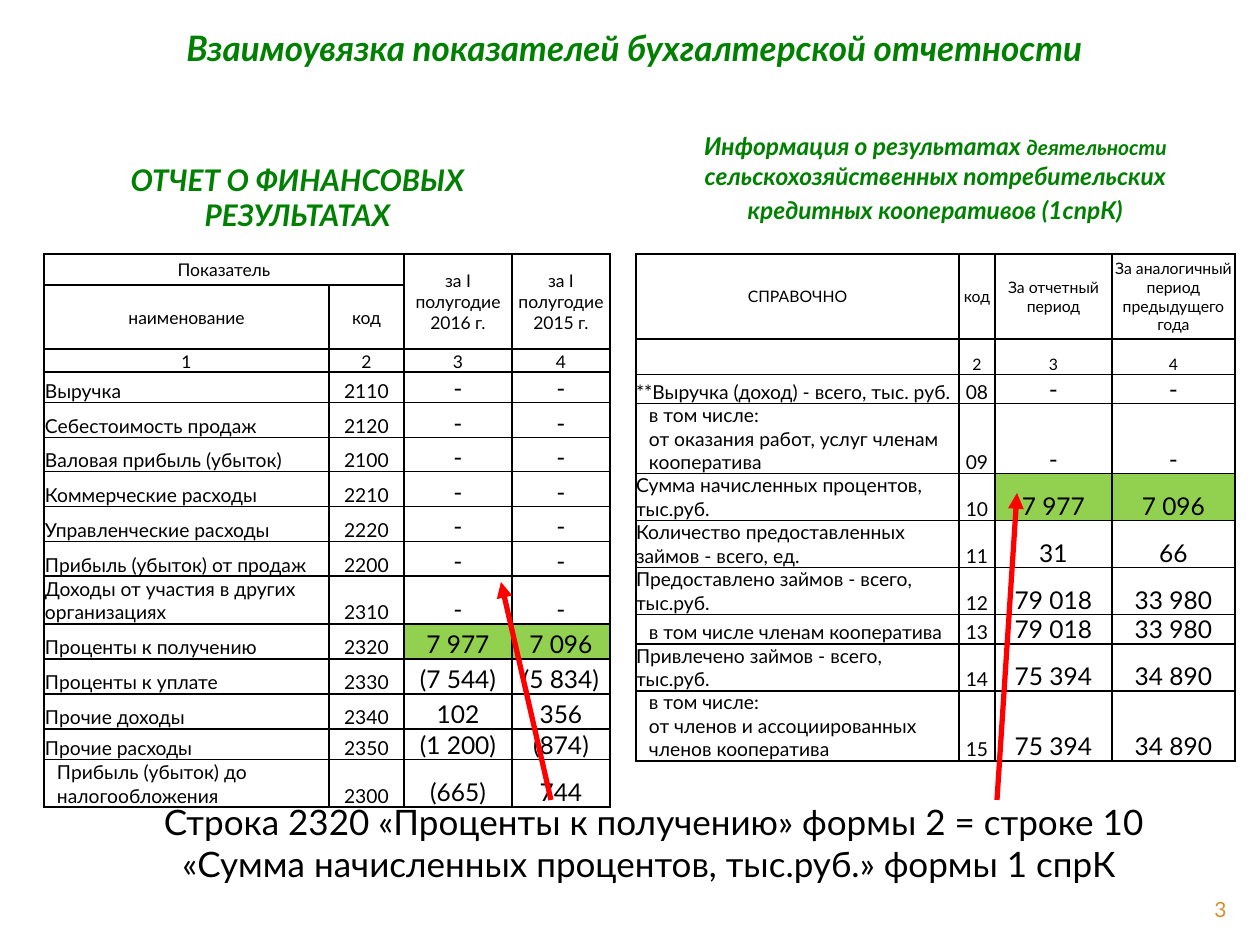
from lxml import etree
from pptx import Presentation
from pptx import util as u
from pptx.dml.color import RGBColor
from pptx.enum import shapes, text as t
from pptx.oxml import ns

PX_PER_INCH = 126
FONT = "Lato"
GREEN = RGBColor(0x00, 0x80, 0x00)
LIME = RGBColor(0x92, 0xD0, 0x50)
RED = RGBColor(0xFF, 0x00, 0x00)
BLACK = RGBColor(0x00, 0x00, 0x00)
WHITE = RGBColor(0xFF, 0xFF, 0xFF)
OCHRE = RGBColor(0xD4, 0x8F, 0x29)
CENTER, LEFT, RIGHT = t.PP_ALIGN.CENTER, t.PP_ALIGN.LEFT, t.PP_ALIGN.RIGHT
TOP, MIDDLE, BOTTOM = t.MSO_ANCHOR.TOP, t.MSO_ANCHOR.MIDDLE, t.MSO_ANCHOR.BOTTOM

INCOME_HEADER = [
    ["Показатель", "", "за I полугодие 2016 г.", "за I полугодие 2015 г."],
    ["наименование", "код", "", ""],
    ["1", "2", "3", "4"],
]
INCOME_ROWS = [
    ["Выручка", "2110", "-", "-"],
    ["Себестоимость продаж", "2120", "-", "-"],
    ["Валовая прибыль (убыток)", "2100", "-", "-"],
    ["Коммерческие расходы", "2210", "-", "-"],
    ["Управленческие расходы", "2220", "-", "-"],
    ["Прибыль (убыток) от продаж", "2200", "-", "-"],
    ["Доходы от участия в других организациях", "2310", "-", "-"],
    ["Проценты к получению", "2320", "7 977", "7 096"],
    ["Проценты к уплате", "2330", "(7 544)", "(5 834)"],
    ["Прочие доходы", "2340", "102", "356"],
    ["Прочие расходы", "2350", "(1 200)", "(874)"],
    ["Прибыль (убыток) до налогообложения", "2300", "(665)", "744"],
]
INCOME_HEIGHTS = [31, 63, 23, 30, 35, 34, 35, 35, 35, 47, 35, 35, 35, 30, 48]

COOP_HEADER = [
    ["СПРАВОЧНО", "код", "За отчетный период", "За аналогичный период предыдущего года"],
    ["", "2", "3", "4"],
]
COOP_ROWS = [
    ["**Выручка (доход) - всего, тыс. руб.", "08", "-", "-"],
    ["в том числе:\nот оказания работ, услуг членам кооператива", "09", "-", "-"],
    ["Сумма начисленных процентов, тыс.руб.", "10", "7 977", "7 096"],
    ["Количество предоставленных займов - всего, ед.", "11", "31", "66"],
    ["Предоставлено займов - всего, тыс.руб.", "12", "79 018", "33 980"],
    ["в том числе членам кооператива", "13", "79 018", "33 980"],
    ["Привлечено займов - всего, тыс.руб.", "14", "75 394", "34 890"],
    ["в том числе:\nот членов и ассоциированных членов кооператива", "15", "75 394", "34 890"],
]
COOP_HEIGHTS = [85, 21, 29, 70, 46, 47, 47, 29, 47, 70]

INDENTED_CODES = {"2300", "09", "13", "15"}
LINKED_CODES = {"2320", "10"}


def px(*lengths):
    values = [round(length * u.Inches(1) / PX_PER_INCH) for length in lengths]
    return values if len(values) > 1 else values[0]


def write(para, words, size, color=BLACK, bold=False, italic=False, align=CENTER, before=0):
    para.alignment = align
    para.space_before = u.Pt(before)
    for index, line in enumerate(words.split("\n")):
        if index:
            para.add_line_break()
        span = para.add_run()
        span.text = line
        font = span.font
        font.name, font.size = FONT, u.Pt(size)
        font.bold, font.italic = bold, italic
        font.color.rgb = color


def place(box, left, top, width, height, anchor=TOP):
    box.left, box.top, box.width, box.height = px(left, top, width, height)
    frame = box.text_frame
    frame.word_wrap = True
    frame.auto_size = t.MSO_AUTO_SIZE.NONE
    frame.vertical_anchor = anchor
    return frame


def write_heading(para, words, size):
    write(para, words, size, GREEN, bold=True, italic=True, before=round(size * 0.2, 1))


def set_borders(cell, color):
    props = cell._tc.get_or_add_tcPr()
    for index, side in enumerate(("a:lnL", "a:lnR", "a:lnT", "a:lnB")):
        line = etree.Element(ns.qn(side), w=str(u.Pt(1)))
        if color is None:
            etree.SubElement(line, ns.qn("a:noFill"))
        else:
            fill = etree.SubElement(line, ns.qn("a:solidFill"))
            etree.SubElement(fill, ns.qn("a:srgbClr"), val=str(color))
        props.insert(index, line)


def format_cell(cell, words, size, anchor=BOTTOM, align=CENTER, inset=0,
                indent=0, fill=WHITE, border=BLACK):
    cell.vertical_anchor = anchor
    cell.margin_left = px(indent or inset)
    cell.margin_right = cell.margin_top = px(inset)
    cell.margin_bottom = 0
    if fill is None:
        cell.fill.background()
    else:
        cell.fill.solid()
        cell.fill.fore_color.rgb = fill
    set_borders(cell, border)
    write(cell.text_frame.paragraphs[0], words, size, align=align)


def add_grid(page, left, top, widths, heights):
    frame = page.shapes.add_table(len(heights), len(widths),
                                  *px(left, top, sum(widths), sum(heights)))
    table = frame.table
    table.first_row = table.horz_banding = False
    for column, width in zip(table.columns, widths):
        column.width = px(width)
    for row, height in zip(table.rows, heights):
        row.height = px(height)
    return table


def add_report(page, left, widths, heights, header, rows, header_size, inset):
    table = add_grid(page, left, 254, widths, heights)
    for r, values in enumerate(header):
        anchor = BOTTOM if r == len(header) - 1 else MIDDLE
        for c, words in enumerate(values):
            format_cell(table.cell(r, c), words, header_size, anchor, inset=inset)
    for r, values in enumerate(rows, len(header)):
        code = values[1]
        for c, words in enumerate(values):
            format_cell(table.cell(r, c), words, 11 if c < 2 else 14,
                        align=CENTER if c else LEFT, inset=inset,
                        indent=13 if c == 0 and code in INDENTED_CODES else 0,
                        fill=LIME if c > 1 and code in LINKED_CODES else WHITE)
    return table


def add_arrow(page, *ends):
    arrow = page.shapes.add_connector(shapes.MSO_CONNECTOR.STRAIGHT, *px(*ends))
    arrow.line.color.rgb = RED
    arrow.line.width = u.Pt(3)
    etree.SubElement(arrow.line._get_or_add_ln(), ns.qn("a:tailEnd"), type="triangle")
    etree.SubElement(arrow._element.spPr, ns.qn("a:effectLst"))


def main():
    deck = Presentation()
    deck.slide_width, deck.slide_height = u.Inches(10), u.Inches(7.5)
    page = deck.slides.add_slide(deck.slide_layouts[4])
    title, income_title, income_slot, coop_title, coop_slot = list(page.placeholders)[:5]
    for slot in (income_slot, coop_slot):
        slot._element.getparent().remove(slot._element)

    frame = place(title, 94, 20, 1081, 69)
    write_heading(frame.paragraphs[0], "Взаимоувязка показателей бухгалтерской отчетности", 20)
    frame = place(income_title, 44, 155, 507, 89)
    write_heading(frame.paragraphs[0], "ОТЧЕТ О ФИНАНСОВЫХ РЕЗУЛЬТАТАХ", 17)
    frame = place(coop_title, 636, 125, 599, 115)
    first = frame.paragraphs[0]
    write_heading(first, "Информация о результатах ", 14)
    write_heading(first, "деятельности", 12)
    write_heading(first, " сельскохозяйственных потребительских", 14)
    write_heading(frame.add_paragraph(), "кредитных кооперативов (1спрК)", 14)

    income = add_report(page, 44, [285, 75, 108, 98], INCOME_HEIGHTS,
                        INCOME_HEADER, INCOME_ROWS, 10, 1)
    income.cell(0, 0).merge(income.cell(0, 1))
    for column in (2, 3):
        income.cell(0, column).merge(income.cell(1, column))
    add_report(page, 636, [323, 36, 117, 123], COOP_HEIGHTS, COOP_HEADER, COOP_ROWS, 9, 0)

    summary = add_grid(page, 123, 800, [1062], [85])
    format_cell(summary.cell(0, 0), "Строка 2320 «Проценты к получению» формы 2 = строке 10 "
                "«Сумма начисленных процентов, тыс.руб.» формы 1 спрК ", 20,
                fill=None, border=None)
    add_arrow(page, 551, 800, 501, 582)
    add_arrow(page, 997, 800, 1017, 493)

    number = page.shapes.add_textbox(*px(1134, 892, 105, 34))
    frame = place(number, 1134, 892, 105, 34, MIDDLE)
    write(frame.paragraphs[0], "3", 12, OCHRE, align=RIGHT)
    deck.save("out.pptx")


if __name__ == "__main__":
    main()
